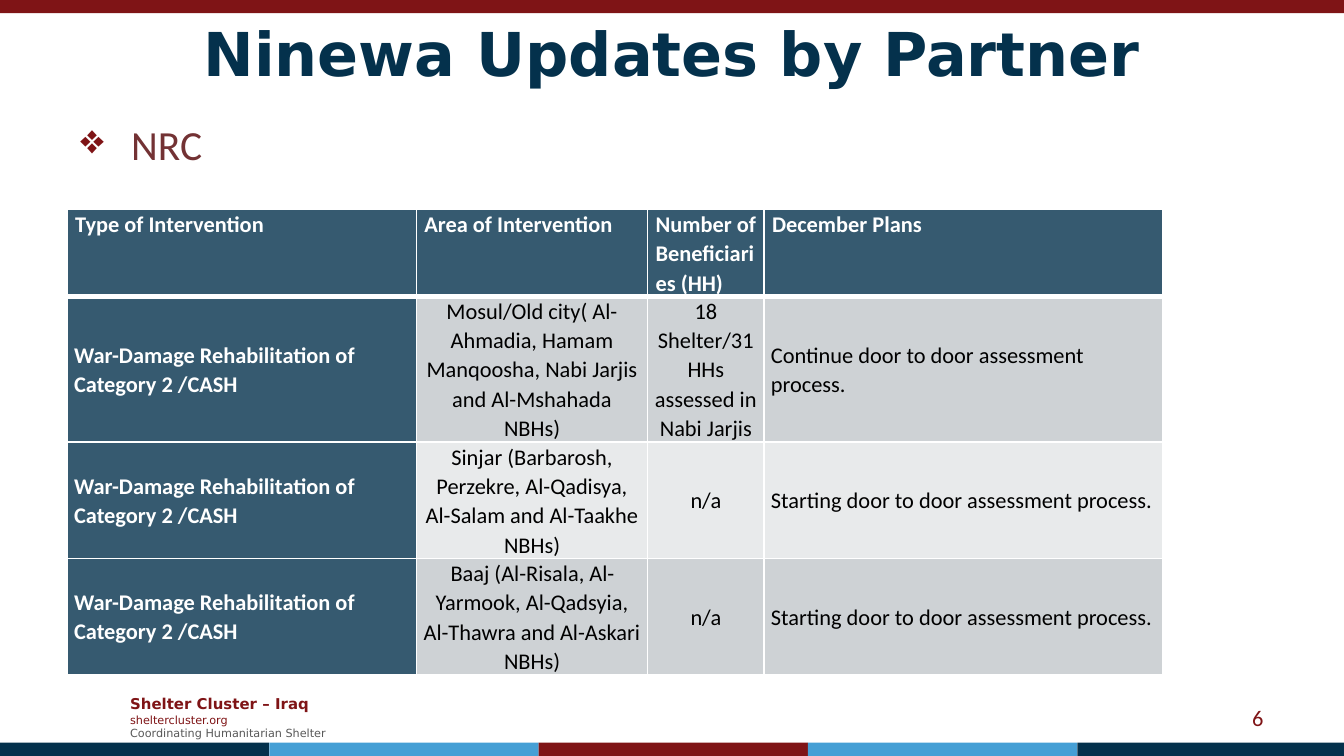
import pptx
import pptx.util
import pptx.dml.color
import pptx.enum.shapes
import pptx.enum.text
import pptx.oxml
import pptx.oxml.ns

Cm = pptx.util.Cm
Pt = pptx.util.Pt
Align = pptx.enum.text.PP_ALIGN
Anchor = pptx.enum.text.MSO_ANCHOR
NS = pptx.oxml.ns.nsdecls("a")

RED, NAVY, SKY = "7F1416", "04314C", "459FD5"
SLATE, WHITE, BLACK = "365A70", "FFFFFF", "000000"
BANDS = ["CED2D5", "E8EAEB"]


def color(code):
    return pptx.dml.color.RGBColor.from_string(code)


class Deck:
    title = "DejaVu Sans"
    body = "Calibri"

    def __init__(self, wide, high):
        self.file = pptx.Presentation()
        self.file.slide_width = Cm(wide)
        self.file.slide_height = Cm(high)
        self.slide = self.file.slides.add_slide(self.file.slide_layouts[6])

    def style(self, para, face, size, tint, bold=False, align=Align.LEFT):
        para.alignment = align
        para.font.name = face
        para.font.size = Pt(size)
        para.font.bold = bold
        para.font.color.rgb = color(tint)

    def bar(self, left, top, width, height, fill):
        kind = pptx.enum.shapes.MSO_SHAPE.RECTANGLE
        shape = self.slide.shapes.add_shape(
            kind, Cm(left), Cm(top), Cm(width), Cm(height))
        shape.shadow.inherit = False
        shape.fill.solid()
        shape.fill.fore_color.rgb = color(fill)
        shape.line.fill.background()

    def text(self, box, lines, anchor=Anchor.MIDDLE, bullet=None):
        frame = self.slide.shapes.add_textbox(*map(Cm, box)).text_frame
        frame.word_wrap = True
        frame.vertical_anchor = anchor
        for n, (words, *look) in enumerate(lines):
            para = frame.add_paragraph() if n else frame.paragraphs[0]
            para.text = words
            if bullet:
                self.bullet(para, bullet)
            self.style(para, *look)

    def bullet(self, para, mark):
        props = para._p.get_or_add_pPr()
        props.set("marL", str(Cm(0.96)))
        props.set("indent", str(-Cm(0.96)))
        for xml in (f'<a:buClr {NS}><a:srgbClr val="{RED}"/></a:buClr>',
                    f'<a:buChar {NS} char="{mark}"/>'):
            props.append(pptx.oxml.parse_xml(xml))

    def border(self, cell, top, bottom):
        props = cell._tc.get_or_add_tcPr()
        sides = [("L", 1), ("R", 1), ("T", top), ("B", bottom)]
        for n, (side, size) in enumerate(sides):
            props.insert(n, pptx.oxml.parse_xml(
                f'<a:ln{side} {NS} w="{Pt(size)}"><a:solidFill>'
                f'<a:srgbClr val="{WHITE}"/></a:solidFill></a:ln{side}>'))

    def cell(self, cell, words, row, col):
        head, dark = row == 0, row == 0 or col == 0
        cell.text = words
        cell.margin_left = cell.margin_right = Cm(0.15 if head else 0.13)
        cell.margin_top = cell.margin_bottom = 0
        cell.vertical_anchor = Anchor.TOP if head else Anchor.MIDDLE
        cell.fill.solid()
        cell.fill.fore_color.rgb = color(SLATE if dark else BANDS[(row - 1) % 2])
        para = cell.text_frame.paragraphs[0]
        para.line_spacing = 1.07
        mid = not head and col in (1, 2)
        self.style(para, self.body, 12, WHITE if dark else BLACK, dark,
                   Align.CENTER if mid else Align.LEFT)
        self.border(cell, 3 if row == 1 else 1, 3 if head else 1)

    def table(self, left, top, cols, rows, data):
        grid = self.slide.shapes.add_table(
            len(rows), len(cols), Cm(left), Cm(top),
            Cm(sum(cols)), Cm(sum(rows))).table
        for n, width in enumerate(cols):
            grid.columns[n].width = Cm(width)
        for n, height in enumerate(rows):
            grid.rows[n].height = Cm(height)
        for r, line in enumerate(data):
            for c, words in enumerate(line):
                self.cell(grid.cell(r, c), words, r, c)


def main():
    deck = Deck(25.4, 14.29)
    deck.bar(0, 0, 25.4, 0.25, RED)
    for n, fill in enumerate([NAVY, SKY, RED, SKY, NAVY]):
        deck.bar(n * 5.09, 14.04, 5.09, 0.25, fill)

    deck.text((2.21, 13, 4.39, 1.12), [
        ("Shelter Cluster – Iraq", deck.title, 8, RED, True),
        ("sheltercluster.org", deck.title, 6, RED),
        ("Coordinating Humanitarian Shelter", deck.title, 6, "595959")])
    deck.text((1.27, 0.58, 22.86, 0.81), [
        ("Ninewa Updates by Partner", deck.title, 32.4, NAVY, True, Align.CENTER)])
    deck.text((1.27, 2.13, 22.3, 1.07), [
        ("NRC", deck.body, 22.2, "733234")], Anchor.TOP, "❖")
    deck.text((18.21, 13.18, 5.92, 0.76), [
        ("6", deck.body, 12, RED, False, Align.RIGHT)])

    kind = "War-Damage Rehabilitation of Category 2 /CASH"
    start = "Starting door to door assessment process."
    deck.table(1.27, 3.96, [6.6, 4.37, 2.2, 7.54], [1.64, 2.76, 2.2, 2.2], [
        ["Type of Intervention", "Area of Intervention",
         "Number of Beneficiaries (HH)", "December Plans"],
        [kind, "Mosul/Old city( Al-Ahmadia, Hamam Manqoosha, "
         "Nabi Jarjis and Al-Mshahada NBHs)",
         "18 Shelter/31 HHs assessed in Nabi Jarjis",
         "Continue door to door assessment process."],
        [kind, "Sinjar (Barbarosh, Perzekre, Al-Qadisya, "
         "Al-Salam and Al-Taakhe NBHs)", "n/a", start],
        [kind, "Baaj (Al-Risala, Al-Yarmook, Al-Qadsyia, "
         "Al-Thawra and Al-Askari NBHs)", "n/a", start]])
    deck.file.save("out.pptx")


if __name__ == "__main__":
    main()
